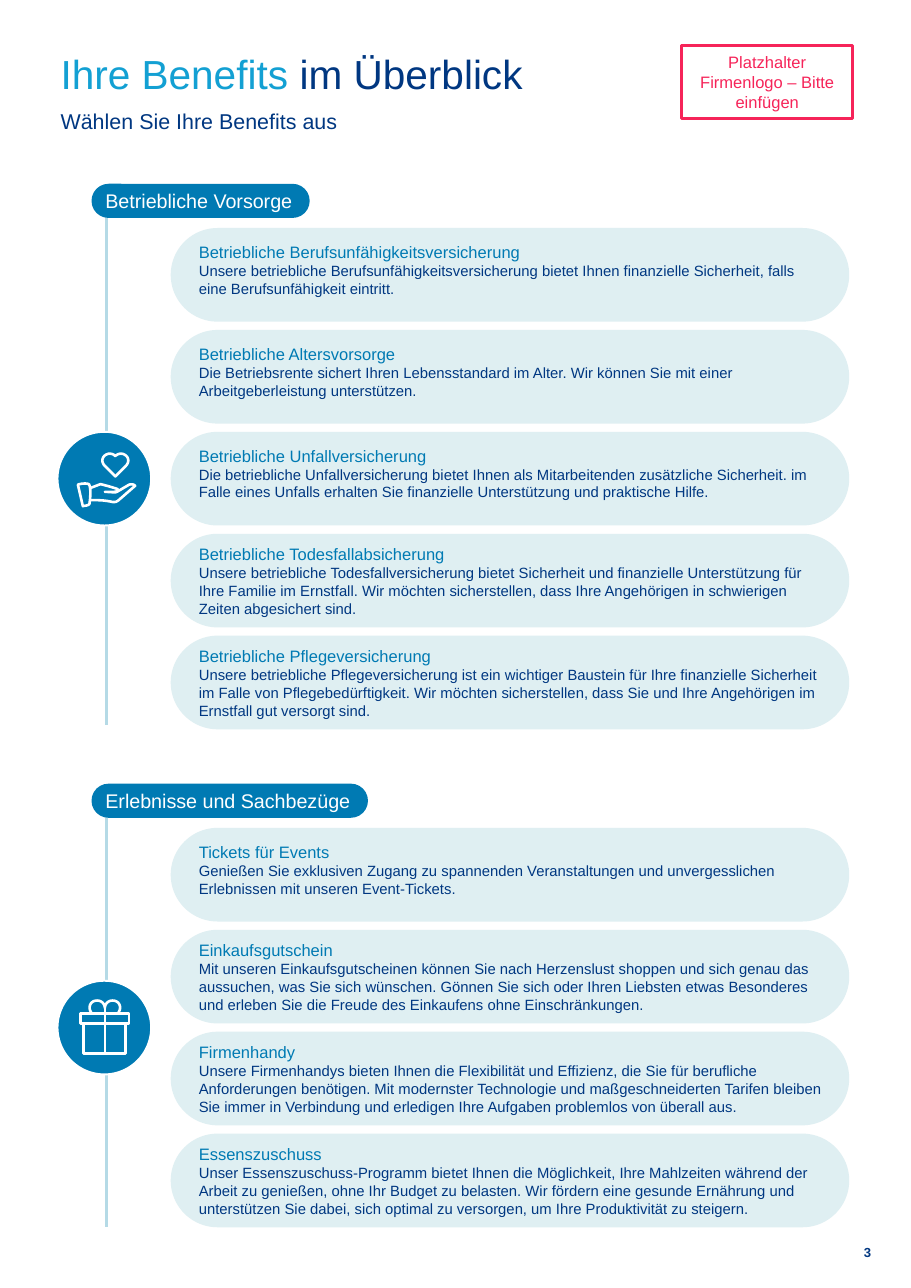
"""Build the portrait page that lists company benefits in two groups."""
from lxml.etree import SubElement
from pptx import Presentation
from pptx.dml.color import RGBColor as Rgb
from pptx.enum.shapes import MSO_CONNECTOR as Link, MSO_SHAPE as Form
from pptx.enum.text import MSO_ANCHOR as Anchor, MSO_AUTO_SIZE as Auto, PP_ALIGN as Align
from pptx.oxml.ns import qn
from pptx.util import Pt

HUES = {"navy": "003781", "blue": "007AB3", "sky": "13A0D3", "pale": "DFEFF2",
        "rail": "B5DAE6", "pink": "F62459", "white": "FFFFFF"}

HEART = [(52.5, 40.5), (43, 31), (40, 28, 40, 24, 43, 21.5), (46, 19, 50, 19.5, 52.5, 22),
         (55, 19.5, 59, 19, 62, 21.5), (65, 24, 65, 28, 62, 31), (52.5, 40.5)]
CUFF = [(18.5, 48), (21, 47, 26, 46.5, 28.5, 47.5), (30.5, 51, 30, 59, 29, 65.5),
        (28, 67, 25, 67, 23, 67.5), (18.5, 48)]
PALM = [(30, 51), (39, 47.5), (45, 49, 52, 51, 54.5, 52), (55.5, 54.5, 52, 55, 43, 54.5),
        (48, 54.5, 52, 55.5, 54, 54.5), (65, 48), (67, 47.5, 69, 47.5, 70.5, 49),
        (55, 62.5), (53, 64, 51, 64, 49, 63.5), (42, 62, 36, 62, 30.5, 62)]
LID = [(21, 29.5), (65, 29.5), (65, 39), (21, 39), (21, 29.5)]
BOX = [(23.5, 39), (23.5, 66), (62, 66), (62, 39)]
BAND = [(43, 25), (43, 66)]
BOW = [(31, 29.5), (27, 24, 30, 18, 36, 18), (40, 18, 43, 21, 43, 25),
       (43, 21, 46, 18, 50, 18), (56, 18, 59, 24, 55, 29.5)]

TOP, MID = Anchor.TOP, Anchor.MIDDLE
GROUPS = [
    {"name": "Betriebliche Vorsorge", "wide": 142.6, "top": 149, "end": 473.8,
     "icon": [HEART, CUFF, PALM], "items": [
        ("Betriebliche Berufsunfähigkeitsversicherung", TOP,
         "Unsere betriebliche Berufsunfähigkeitsversicherung bietet Ihnen finanzielle Sicherheit, "
         "falls eine Berufsunfähigkeit eintritt."),
        ("Betriebliche Altersvorsorge", TOP,
         "Die Betriebsrente sichert Ihren Lebensstandard im Alter. Wir können Sie mit einer "
         "Arbeitgeberleistung unterstützen."),
        ("Betriebliche Unfallversicherung", TOP,
         "Die betriebliche Unfallversicherung bietet Ihnen als Mitarbeitenden zusätzliche Sicherheit. "
         "im Falle eines Unfalls erhalten Sie finanzielle Unterstützung und praktische Hilfe."),
        ("Betriebliche Todesfallabsicherung", MID,
         "Unsere betriebliche Todesfallversicherung bietet Sicherheit und finanzielle Unterstützung "
         "für Ihre Familie im Ernstfall. Wir möchten sicherstellen, dass Ihre Angehörigen in "
         "schwierigen Zeiten abgesichert sind."),
        ("Betriebliche Pflegeversicherung", MID,
         "Unsere betriebliche Pflegeversicherung ist ein wichtiger Baustein für Ihre finanzielle "
         "Sicherheit im Falle von Pflegebedürftigkeit. Wir möchten sicherstellen, dass Sie und Ihre "
         "Angehörigen im Ernstfall gut versorgt sind.")]},
    {"name": "Erlebnisse und Sachbezüge", "wide": 180.7, "top": 541, "end": 802,
     "icon": [LID, BOX, BAND, BOW], "items": [
        ("Tickets für Events", TOP,
         "Genießen Sie exklusiven Zugang zu spannenden Veranstaltungen und unvergesslichen "
         "Erlebnissen mit unseren Event-Tickets."),
        ("Einkaufsgutschein", MID,
         "Mit unseren Einkaufsgutscheinen können Sie nach Herzenslust shoppen und sich genau das "
         "aussuchen, was Sie sich wünschen. Gönnen Sie sich oder Ihren Liebsten etwas Besonderes "
         "und erleben Sie die Freude des Einkaufens ohne Einschränkungen."),
        ("Firmenhandy", MID,
         "Unsere Firmenhandys bieten Ihnen die Flexibilität und Effizienz, die Sie für berufliche "
         "Anforderungen benötigen. Mit modernster Technologie und maßgeschneiderten Tarifen bleiben "
         "Sie immer in Verbindung und erledigen Ihre Aufgaben problemlos von überall aus."),
        ("Essenszuschuss", MID,
         "Unser Essenszuschuss-Programm bietet Ihnen die Möglichkeit, Ihre Mahlzeiten während der "
         "Arbeit zu genießen, ohne Ihr Budget zu belasten. Wir fördern eine gesunde Ernährung und "
         "unterstützen Sie dabei, sich optimal zu versorgen, um Ihre Produktivität zu steigern.")]},
]
STEP, HIGH = 66.6, 61.2
UNIT = 0.72


def hue(name):
    return Rgb.from_string(HUES[name])


def style(para, size, name, align=Align.LEFT, bold=False):
    para.alignment = align
    for run in para.runs:
        font = run.font
        font.name, font.size, font.bold = "Arial", Pt(size), bold
        font.color.rgb = hue(name)


def inset(frame, left, right, anchor):
    frame.margin_left, frame.margin_right = Pt(left), Pt(right)
    frame.margin_top = frame.margin_bottom = 0
    frame.vertical_anchor = anchor
    frame.word_wrap = True


def paint(shape, fill=None, line=None, width=1):
    shape.shadow.inherit = False
    if fill:
        shape.fill.solid()
        shape.fill.fore_color.rgb = hue(fill)
    else:
        shape.fill.background()
    if line:
        shape.line.color.rgb = hue(line)
        shape.line.width = Pt(width)
    else:
        shape.line.fill.background()


def put(shapes, form, *spot):
    return shapes.add_shape(form, *[Pt(v) for v in spot])


def trace(track, steps=12):
    dots = [track[0]]
    for part in track[1:]:
        if len(part) == 2:
            dots.append(part)
            continue
        pts = [dots[-1], part[:2], part[2:4], part[4:]]
        for t in (i / steps for i in range(1, steps + 1)):
            u = 1 - t
            mix = (u ** 3, 3 * u * u * t, 3 * u * t * t, t ** 3)
            dots.append(tuple(sum(m * p[k] for m, p in zip(mix, pts)) for k in (0, 1)))
    return [(x * 100, y * 100) for x, y in dots]


def badge(shapes, left, top, icon):
    group = shapes.add_group_shape().shapes
    paint(put(group, Form.OVAL, left, top, HIGH, HIGH), "blue", "white", 1.25)
    for track in icon:
        dots = trace(track)
        pen = group.build_freeform(*dots[0], scale=Pt(UNIT) / 100)
        pen.add_line_segments(dots[1:], close=track[0] == track[-1])
        paint(pen.convert_to_shape(Pt(left), Pt(top)), line="white", width=1.7)


def rail(shapes, x, top, end):
    line = shapes.add_connector(Link.STRAIGHT, Pt(x), Pt(top), Pt(x), Pt(end))
    line.line.color.rgb = hue("rail")
    line.line.width = Pt(2)
    SubElement(line._element.spPr, qn("a:effectLst"))


def section(shapes, data):
    top, items = data["top"], data["items"]
    rail(shapes, 69.8, top - 7.5, data["end"])
    label = put(shapes, Form.ROUNDED_RECTANGLE, 59.8, top - 28.9, data["wide"], 22.3)
    label.adjustments[0] = 0.5
    paint(label, "blue")
    frame = label.text_frame
    inset(frame, 5.8, 5.8, MID)
    frame.word_wrap = False
    frame.text = data["name"]
    style(frame.paragraphs[0], 12.9, "white")
    for i, (head, anchor, body) in enumerate(items):
        pill = put(shapes, Form.ROUNDED_RECTANGLE, 111.6, top + i * STEP, 443.5, HIGH)
        pill.adjustments[0] = 0.5
        paint(pill, "pale")
        frame = pill.text_frame
        inset(frame, 9.4, 5.8, anchor)
        frame.text = head + "\n" + body
        style(frame.paragraphs[0], 10.8, "blue")
        style(frame.paragraphs[1], 9.7, "navy")
    badge(shapes, 37.6, top + (len(items) - 1) * STEP / 2, data["icon"])


def header(shapes):
    title = shapes.title
    title.left, title.top, title.width, title.height = Pt(39.6), Pt(41), Pt(440.6), Pt(48.2)
    frame = title.text_frame
    frame.auto_size = Auto.NONE
    inset(frame, 0, 0, TOP)
    para = frame.paragraphs[0]
    para.text = "Ihre Benefits "
    para.add_run().text = "im Überblick"
    para.add_line_break()
    para.add_run().text = "Wählen Sie Ihre Benefits aus"
    para.line_spacing = Pt(23.1)
    style(para, 26.5, "navy")
    para.runs[0].font.color.rgb = hue("sky")
    para.runs[2].font.size = Pt(14)


def main():
    deck = Presentation()
    deck.slide_width, deck.slide_height = Pt(595.44), Pt(841.68)
    shapes = deck.slides.add_slide(deck.slide_layouts[5]).shapes
    header(shapes)
    for data in GROUPS:
        section(shapes, data)

    logo = put(shapes, Form.RECTANGLE, 445.7, 29.5, 111.6, 48.2)
    paint(logo, line="pink", width=2)
    logo.text_frame.text = "Platzhalter\vFirmenlogo – Bitte einfügen"
    logo.text_frame.vertical_anchor = MID
    style(logo.text_frame.paragraphs[0], 10.8, "pink", Align.CENTER)

    page = shapes.add_textbox(Pt(546.5), Pt(812.2), Pt(23), Pt(12.2)).text_frame
    inset(page, 0, 0, MID)
    page.text = "3"
    style(page.paragraphs[0], 8.6, "navy", Align.RIGHT, True)
    deck.save("out.pptx")


if __name__ == "__main__":
    main()
